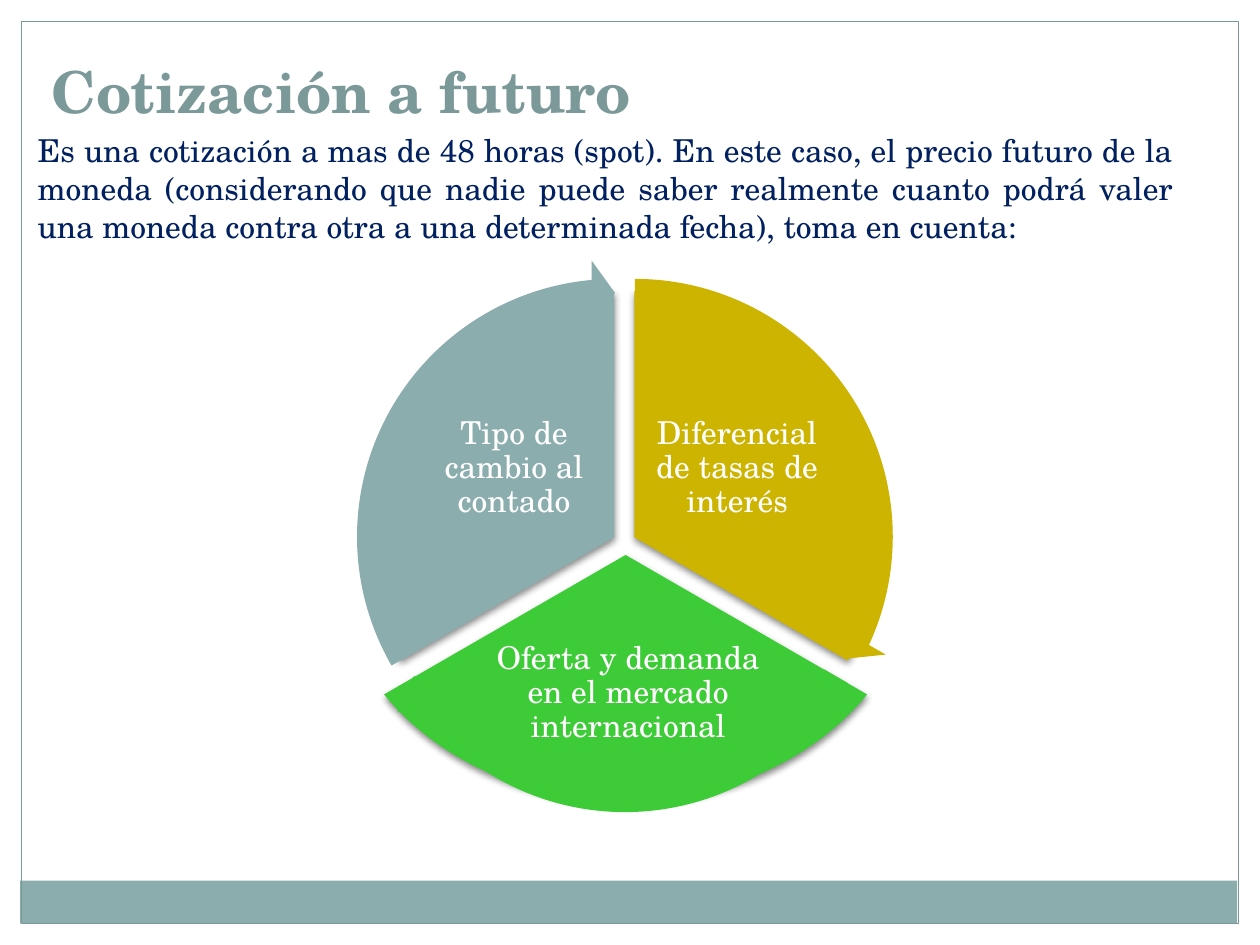
from lxml import etree
from pptx import Presentation
from pptx.dml.color import RGBColor
from pptx.enum import shapes, text
from pptx.oxml.ns import qn
from pptx.util import Inches, Pt

FONT = "TeX Gyre Schola"
TEAL, GOLD, GREEN = "8CADAE", "CCB400", "3ECB38"
SLATE, NAVY, WHITE = "7C999A", "002060", "FFFFFF"
PIE_SIZE, RING_SIZE = 3.91, 4.4


def color(hex_value):
    return RGBColor.from_string(hex_value)


def set_all(target, values):
    for name, value in values.items():
        setattr(target, name, value)


def add_shape(slide, kind, box, fill=None, line=None, adjustments=()):
    shape = slide.shapes.add_shape(kind, *map(Inches, box))
    shape.shadow.inherit = False
    for index, value in enumerate(adjustments):
        shape.adjustments[index] = value
    if fill:
        shape.fill.solid()
        shape.fill.fore_color.rgb = color(fill)
    else:
        shape.fill.background()
    if line:
        shape.line.color.rgb = color(line)
        shape.line.width = Pt(0.75)
    else:
        shape.line.fill.background()
    return shape


def add_drop_shadow(shape):
    effects = shape.element.spPr.find(qn("a:effectLst"))
    shadow = etree.SubElement(effects, qn("a:outerShdw"), {
        "blurRad": str(Pt(4)), "dist": str(Pt(2)),
        "dir": "5400000", "rotWithShape": "0"})
    black = etree.SubElement(shadow, qn("a:srgbClr"), val="000000")
    etree.SubElement(black, qn("a:alpha"), val="45000")


def add_text(slide, box, wording, hex_value, font=None, frame=None, paragraph=None):
    text_frame = slide.shapes.add_textbox(*map(Inches, box)).text_frame
    set_all(text_frame, {"word_wrap": True, **(frame or {})})
    line = text_frame.paragraphs[0]
    set_all(line, paragraph or {})
    run = line.add_run()
    run.text = wording
    set_all(run.font, {"name": FONT, "size": Pt(18), **(font or {})})
    run.font.color.rgb = color(hex_value)


def add_sector(slide, box, fill, start, end, label, label_box):
    sector = add_shape(slide, shapes.MSO_SHAPE.PIE, box, fill,
                       adjustments=(start, end))
    add_drop_shadow(sector)
    margins = {f"margin_{side}": Inches(0.03)
               for side in ("left", "right", "top", "bottom")}
    add_text(slide, label_box, label, WHITE,
             frame={"vertical_anchor": text.MSO_ANCHOR.MIDDLE, **margins},
             paragraph={"alignment": text.PP_ALIGN.CENTER, "line_spacing": 0.9})


def add_ring(slide, left, top, fill, head, tail):
    add_shape(slide, shapes.MSO_SHAPE.CIRCULAR_ARROW,
              (left, top, RING_SIZE, RING_SIZE), fill,
              adjustments=(0.05, 3.28, head, tail, 0.06))


def main():
    presentation = Presentation()
    presentation.slide_width, presentation.slide_height = Inches(10), Inches(7.5)
    slide = presentation.slides.add_slide(presentation.slide_layouts[6])

    rectangle = shapes.MSO_SHAPE.RECTANGLE
    add_shape(slide, rectangle, (0.16, 6.99, 9.66, 0.34), TEAL)
    add_shape(slide, rectangle, (0.17, 0.17, 9.66, 7.16), line=SLATE)

    add_text(slide, (0.31, 0.21, 9.33, 0.83), "Cotización a futuro", SLATE,
             font={"size": Pt(33), "bold": True},
             frame={"vertical_anchor": text.MSO_ANCHOR.BOTTOM})
    add_text(slide, (0.2, 0.99, 9.21, 1.01),
             "Es una cotización a mas de 48 horas (spot). En este caso, el precio "
             "futuro de la moneda (considerando que nadie puede saber realmente "
             "cuanto podrá valer una moneda contra otra a una determinada fecha), "
             "toma en cuenta:", NAVY,
             paragraph={"alignment": text.PP_ALIGN.JUSTIFY})

    sectors = [
        ((3.08, 2.31, PIE_SIZE, PIE_SIZE), GOLD, 162, 18,
         "Diferencial de tasas de interés", (5.15, 3.14, 1.4, 1.16)),
        ((2.64, 2.45, 4.65, PIE_SIZE), GREEN, 18, 90,
         "Oferta y demanda en el mercado internacional", (3.74, 4.99, 2.49, 1.03)),
        ((2.92, 2.31, PIE_SIZE, PIE_SIZE), TEAL, 90, 162,
         "Tipo de cambio al contado", (3.38, 3.14, 1.4, 1.16)),
    ]
    for sector in sectors:
        add_sector(slide, *sector)

    rings = [
        (2.84, 2.06, GOLD, 14.72, 161.99),
        (2.76, 2.2, GREEN, 86.72, 18.01),
        (2.68, 2.06, TEAL, 158.73, 90),
    ]
    for ring in rings:
        add_ring(slide, *ring)

    presentation.save("out.pptx")


if __name__ == "__main__":
    main()
